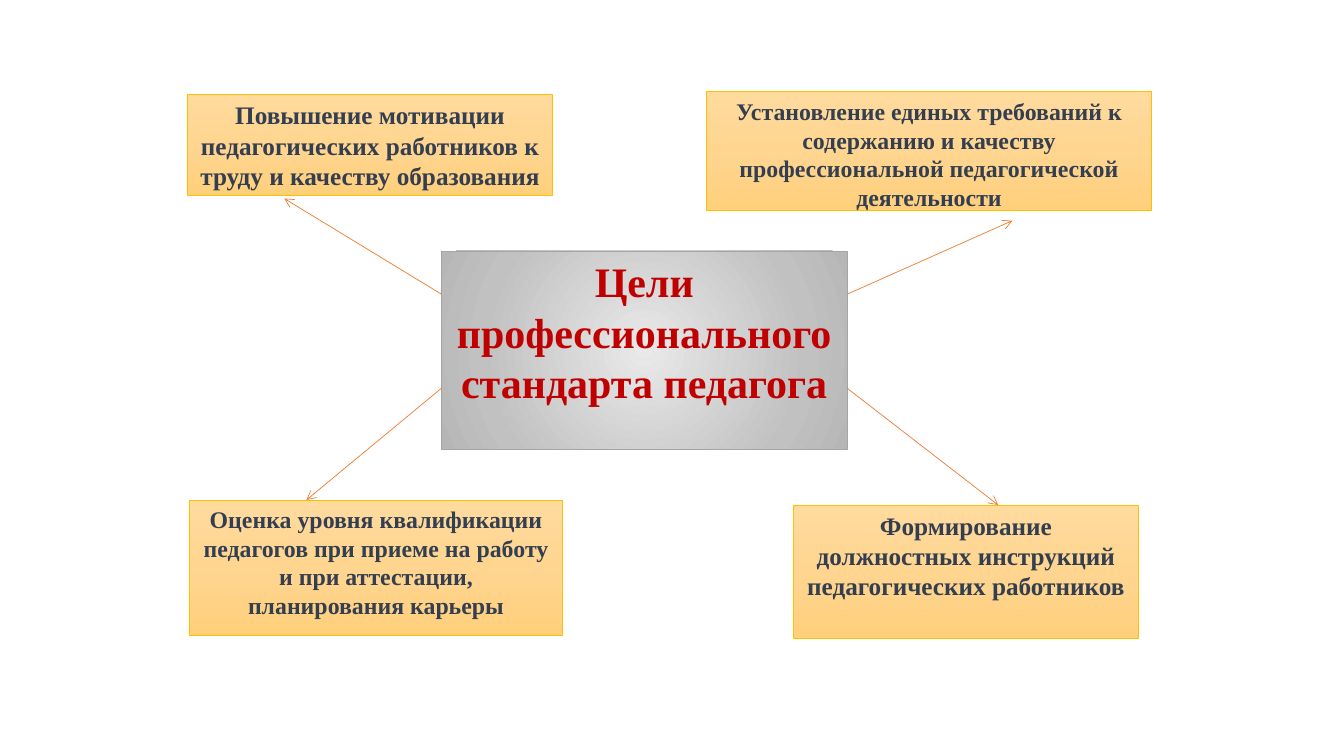
from dataclasses import dataclass

from lxml.etree import SubElement
from pptx import Presentation
from pptx.dml.color import RGBColor
from pptx.enum.shapes import MSO_CONNECTOR, MSO_SHAPE
from pptx.enum.text import MSO_ANCHOR, PP_ALIGN
from pptx.oxml import parse_xml
from pptx.oxml.ns import nsdecls, qn
from pptx.slide import Slide
from pptx.util import Inches, Pt

GOLD = RGBColor(0xFF, 0xC0, 0x00)
GRAY = RGBColor(0xA5, 0xA5, 0xA5)
ORANGE = RGBColor(0xED, 0x7D, 0x31)
SLATE = RGBColor(0x33, 0x3F, 0x50)
RED = RGBColor(0xC0, 0x00, 0x00)


@dataclass(frozen=True)
class Gradient:
    stops: tuple[tuple[int, RGBColor], ...]
    direction: str


@dataclass(frozen=True)
class Style:
    gradient: Gradient
    border: RGBColor
    text: RGBColor


@dataclass(frozen=True)
class Box:
    left: float
    top: float
    width: float
    height: float
    text: str
    size: int
    style: Style


@dataclass(frozen=True)
class Arrow:
    x1: float
    y1: float
    x2: float
    y2: float


GOAL = Style(
    Gradient(
        (
            (0, RGBColor(0xFF, 0xDB, 0x9E)),
            (50, RGBColor(0xFF, 0xD5, 0x90)),
            (100, RGBColor(0xFF, 0xD0, 0x7C)),
        ),
        '<a:lin ang="5400000" scaled="0"/>',
    ),
    GOLD,
    SLATE,
)
CENTER = Style(
    Gradient(
        (
            (0, RGBColor(0xE9, 0xE9, 0xE9)),
            (72, RGBColor(0xC1, 0xC1, 0xC1)),
            (100, RGBColor(0xB6, 0xB6, 0xB6)),
        ),
        '<a:path path="circle">'
        '<a:fillToRect l="50000" t="50000" r="50000" b="50000"/></a:path>',
    ),
    GRAY,
    RED,
)

BOXES = (
    Box(1.86, 0.94, 3.62, 1,
        "Повышение мотивации педагогических работников к труду и качеству образования",
        18, GOAL),
    Box(7.01, 0.91, 4.41, 1.18,
        "Установление единых требований к содержанию и качеству "
        "профессиональной педагогической деятельности",
        17, GOAL),
    Box(1.88, 4.96, 3.7, 1.34,
        "Оценка уровня квалификации педагогов при приеме на работу "
        "и при аттестации, планирования карьеры",
        17, GOAL),
    Box(7.87, 5.01, 3.42, 1.32,
        "Формирование должностных инструкций педагогических работников",
        18, GOAL),
    Box(4.38, 2.49, 4.02, 1.97,
        "Цели профессионального стандарта педагога",
        30, CENTER),
)

ARROWS = (
    Arrow(4.38, 2.92, 2.82, 1.97),
    Arrow(4.38, 3.85, 3.04, 4.96),
    Arrow(8.4, 2.92, 10.04, 2.19),
    Arrow(8.4, 3.85, 9.9, 5.01),
)


def add_box(s: Slide, box: Box) -> None:
    sp = s.shapes.add_shape(
        MSO_SHAPE.RECTANGLE,
        Inches(box.left), Inches(box.top), Inches(box.width), Inches(box.height),
    )
    sp.shadow.inherit = False
    gradient = box.style.gradient
    stops = "".join(
        f'<a:gs pos="{pos * 1000}"><a:srgbClr val="{color}"/></a:gs>'
        for pos, color in gradient.stops
    )
    fill = parse_xml(
        f'<a:gradFill {nsdecls("a")} rotWithShape="1">'
        f"<a:gsLst>{stops}</a:gsLst>{gradient.direction}</a:gradFill>"
    )
    sp._element.spPr.find(qn("a:prstGeom")).addnext(fill)
    sp.line.color.rgb = box.style.border
    sp.line.width = Pt(0.5)
    tf = sp.text_frame
    tf.word_wrap = True
    tf.vertical_anchor = MSO_ANCHOR.TOP
    p = tf.paragraphs[0]
    p.text = box.text
    p.alignment = PP_ALIGN.CENTER
    p.line_spacing = 1.0
    p.space_after = Pt(10)
    p.font.name = "Times New Roman"
    p.font.size = Pt(box.size)
    p.font.bold = True
    p.font.color.rgb = box.style.text


def add_arrow(s: Slide, arrow: Arrow) -> None:
    cxn = s.shapes.add_connector(
        MSO_CONNECTOR.STRAIGHT,
        Inches(arrow.x1), Inches(arrow.y1), Inches(arrow.x2), Inches(arrow.y2),
    )
    cxn.line.color.rgb = ORANGE
    cxn.line.width = Pt(0.5)
    spPr = cxn._element.spPr
    SubElement(spPr.find(qn("a:ln")), qn("a:tailEnd"), type="arrow")
    SubElement(spPr, qn("a:effectLst"))


def main() -> None:
    prs = Presentation()
    prs.slide_width = Inches(13.33)
    prs.slide_height = Inches(7.5)
    s = prs.slides.add_slide(prs.slide_layouts[6])
    for box in BOXES:
        add_box(s, box)
    for arrow in ARROWS:
        add_arrow(s, arrow)
    prs.save("out.pptx")


if __name__ == "__main__":
    main()
